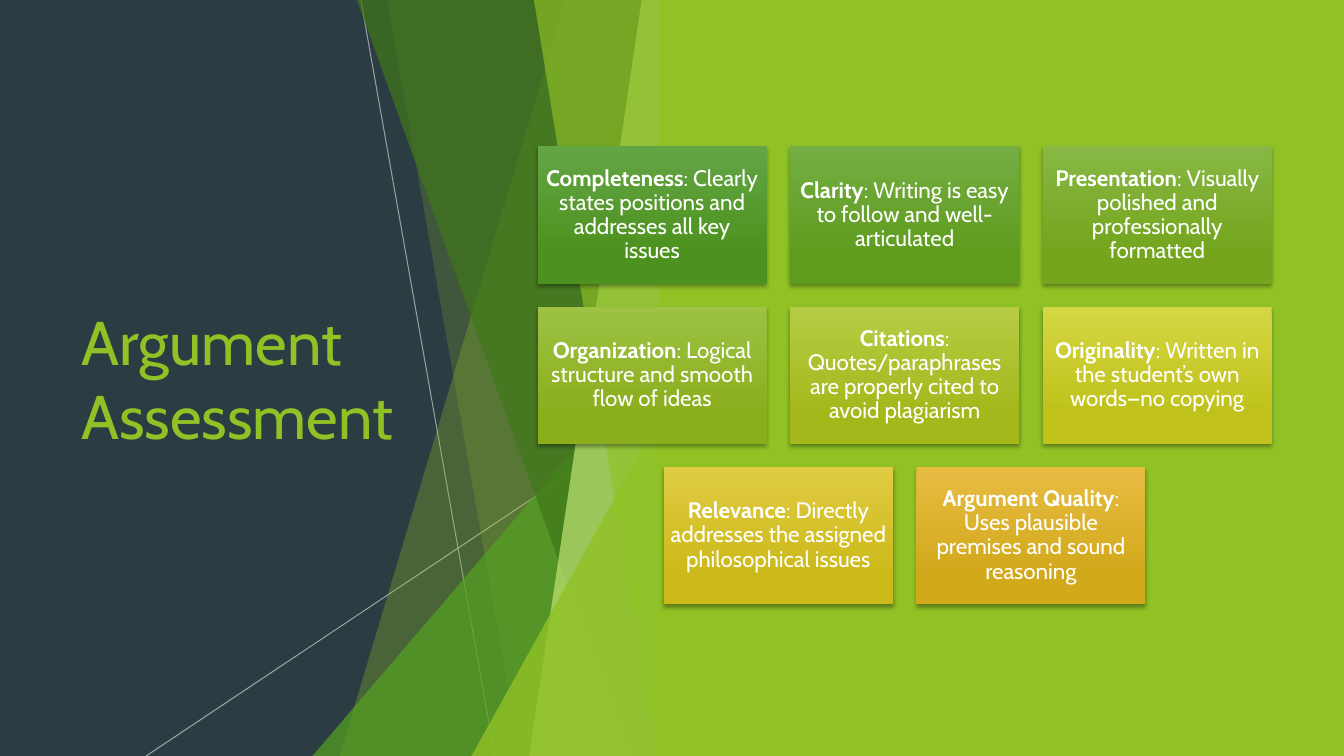
from lxml.etree import SubElement
from pptx import Presentation
from pptx.dml.color import RGBColor
from pptx.enum.shapes import MSO_CONNECTOR as Connector, MSO_SHAPE as Preset
from pptx.enum.text import MSO_ANCHOR as Anchor, MSO_AUTO_SIZE as AutoSize, PP_ALIGN as Align
from pptx.oxml.ns import qn
from pptx.util import Pt

COLORS = {
    "slate": "2C3C43", "green": "90C226", "leaf": "54A021", "forest": "3F7819",
    "lime": "C0E474", "thread": "BFBFBF", "white": "FFFFFF", "black": "000000",
}
FONT = "Cabin"
FACET_EDGE = 479.5
CARD_WIDTH, CARD_HEIGHT = 163.6, 98.2
CARD_LEFT, CARD_TOP = 384, 104.5
COLUMN_STEP, ROW_STEP = 180.4, 114.5
CARDS_PER_ROW = 3
CARDS = [
    ("Completeness", "Clearly states positions and addresses all key issues", "63A545", "4D921E"),
    ("Clarity", "Writing is easy to follow and well-articulated", "74AE44", "5F9C1E"),
    ("Presentation", "Visually polished and professionally formatted", "87B844", "74A51D"),
    ("Organization", "Logical structure and smooth flow of ideas", "9DC244", "8BAE1D"),
    ("Citations", "Quotes/paraphrases are properly cited to avoid plagiarism", "B7CC44", "A4B81C"),
    ("Originality", "Written in the student’s own words—no copying", "D4D643", "C0C21B"),
    ("Relevance", "Directly addresses the assigned philosophical issues", "E0CC43", "CCB919"),
    ("Argument Quality", "Uses plausible premises and sound reasoning", "E7BC43", "D2A91B"),
]


def color(name):
    return RGBColor.from_string(COLORS.get(name, name))


def set_opacity(element, percent):
    for rgb in element.spPr.iter(qn("a:srgbClr")):
        SubElement(rgb, qn("a:alpha"), val=str(percent * 1000))


def write_text(paragraph, text, size=16, ink="white", bold=False):
    run = paragraph.add_run()
    run.text = text
    run.font.name = FONT
    run.font.size = Pt(size)
    run.font.bold = bold
    run.font.color.rgb = color(ink)


class FacetSlide:
    """Draws the elements of a faceted slide."""

    def __init__(self, presentation):
        self.slide = presentation.slides.add_slide(presentation.slide_layouts[5])
        self.shapes = self.slide.shapes
        background = self.slide.background.fill
        background.solid()
        background.fore_color.rgb = color("slate")

    def title(self, text, left, top, width, height):
        shape = self.shapes.title
        shape.left, shape.top, shape.width, shape.height = map(Pt, (left, top, width, height))
        frame = shape.text_frame
        frame.word_wrap = True
        frame.auto_size = AutoSize.NONE
        frame.vertical_anchor = Anchor.MIDDLE
        paragraph = frame.paragraphs[0]
        paragraph.alignment = Align.LEFT
        write_text(paragraph, text, size=44, ink="green")

    def thread(self, start, end, opacity):
        line = self.shapes.add_connector(Connector.STRAIGHT, *map(Pt, start + end))
        line.line.color.rgb = color("thread")
        line.line.width = Pt(0.75)
        set_opacity(line._element, opacity)
        SubElement(line._element.spPr, qn("a:effectLst"))

    def paint(self, shape, fill, opacity=100):
        shape.shadow.inherit = False
        shape.line.fill.background()
        shape.fill.solid()
        shape.fill.fore_color.rgb = color(fill)
        if opacity < 100:
            set_opacity(shape._element, opacity)

    def facet(self, top_left, bottom_left, fill, opacity):
        outline = self.shapes.build_freeform(Pt(top_left), 0)
        corners = [(FACET_EDGE, 0), (FACET_EDGE, 540), (bottom_left, 540)]
        outline.add_line_segments([(Pt(x), Pt(y)) for x, y in corners])
        self.paint(outline.convert_to_shape(), fill, opacity)

    def wedge(self, left, top, fill, opacity):
        shape = self.shapes.add_shape(
            Preset.ISOSCELES_TRIANGLE, Pt(left), Pt(top), Pt(FACET_EDGE - left), Pt(540 - top))
        shape.adjustments[0] = 1
        self.paint(shape, fill, opacity)

    def panel(self, left, width, fill):
        self.paint(self.shapes.add_shape(Preset.RECTANGLE, Pt(left), 0, Pt(width), Pt(540)), fill)

    def card(self, left, top, heading, detail, light, dark):
        shape = self.shapes.add_shape(
            Preset.RECTANGLE, Pt(left), Pt(top), Pt(CARD_WIDTH), Pt(CARD_HEIGHT))
        shape.line.fill.background()
        shape.fill.gradient()
        shape.fill.gradient_angle = 270
        for stop, position, shade in zip(shape.fill.gradient_stops, (0, 0.78), (light, dark)):
            stop.position = position
            stop.color.rgb = color(shade)
        self.drop_shadow(shape)
        frame = shape.text_frame
        frame.word_wrap = True
        frame.vertical_anchor = Anchor.MIDDLE
        frame.margin_left = frame.margin_right = frame.margin_top = frame.margin_bottom = Pt(4.8)
        paragraph = frame.paragraphs[0]
        paragraph.alignment = Align.CENTER
        paragraph.line_spacing = 0.9
        write_text(paragraph, heading, bold=True)
        write_text(paragraph, f": {detail}")

    def drop_shadow(self, shape):
        shape.shadow.inherit = False
        effects = shape._element.spPr.find(qn("a:effectLst"))
        shadow = SubElement(effects, qn("a:outerShdw"), blurRad=str(Pt(3)), dist=str(Pt(2)),
                            dir="5400000", algn="ctr", rotWithShape="0")
        rgb = SubElement(shadow, qn("a:srgbClr"), val=COLORS["black"])
        SubElement(rgb, qn("a:alpha"), val="35000")


def main():
    presentation = Presentation()
    presentation.slide_width, presentation.slide_height = Pt(960), Pt(540)
    page = FacetSlide(presentation)
    page.title("Argument Assessment", 51, 108.7, 279.4, 322.6)

    page.thread((257.8, 0), (353.5, 540), 75)
    page.thread((479.5, 290), (104.4, 540), 80)
    page.facet(404, 242.6, "green", 30)
    page.facet(276.5, 371.5, "green", 20)
    page.wedge(223.2, 239.8, "leaf", 72)
    page.facet(255, 449.3, "forest", 70)
    page.facet(458.4, 378, "lime", 70)
    page.facet(381.4, 468.8, "green", 65)
    page.wedge(336.8, 283, "green", 80)
    page.panel(470.6, 489.4, "green")

    for index, card in enumerate(CARDS):
        row, column = divmod(index, CARDS_PER_ROW)
        row_count = min(CARDS_PER_ROW, len(CARDS) - row * CARDS_PER_ROW)
        indent = (CARDS_PER_ROW - row_count) * COLUMN_STEP / 2
        page.card(CARD_LEFT + indent + column * COLUMN_STEP, CARD_TOP + row * ROW_STEP, *card)

    presentation.save("out.pptx")


if __name__ == "__main__":
    main()
